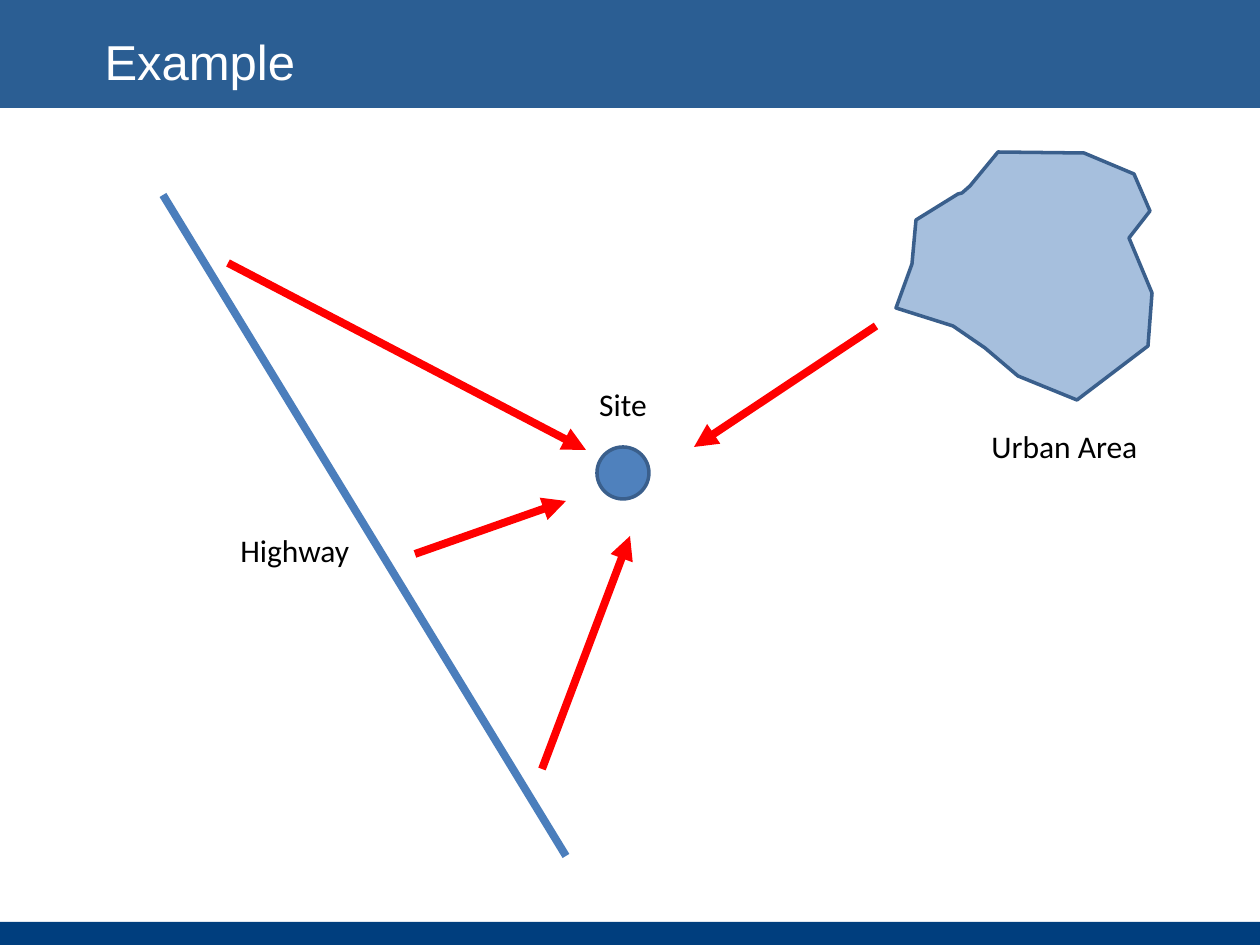
from lxml.etree import SubElement
from pptx import Presentation
from pptx.dml.color import RGBColor
from pptx.enum.shapes import MSO_CONNECTOR, MSO_SHAPE
from pptx.enum.text import MSO_ANCHOR, MSO_AUTO_SIZE, PP_ALIGN
from pptx.oxml.ns import qn
from pptx.util import Pt

PX = 914400 / 126  # EMU per px
WIDTH, HEIGHT = 1260, 945

NAVY = RGBColor(0x00, 0x3E, 0x7E)
BLUE = RGBColor(0x4F, 0x81, 0xBD)
OUTLINE = RGBColor(0x3A, 0x5F, 0x8C)
ROAD = RGBColor(0x4B, 0x7E, 0xBC)
RED = RGBColor(0xFF, 0x00, 0x00)
BLACK = RGBColor(0x00, 0x00, 0x00)
WHITE = RGBColor(0xFF, 0xFF, 0xFF)

CITY_OUTLINE = [
    (74, 34), (66, 41), (62, 42), (20, 68), (16, 112), (0, 156), (57, 174),
    (89, 196), (122, 224), (181, 248), (252, 194), (256, 141), (233, 86),
    (254, 59), (238, 22), (188, 1), (102, 0),
]


def emu(*lengths):
    return [round(n * PX) for n in lengths]


def set_attrs(obj, values):
    for name, value in values.items():
        setattr(obj, name, value)


def paint(sp, fill, line=None, alpha=100):
    sp.shadow.inherit = False
    sp.fill.solid()
    sp.fill.fore_color.rgb = fill
    if alpha < 100:
        color = sp.fill._xPr.find(qn("a:solidFill"))[0]
        SubElement(color, qn("a:alpha"), val=str(alpha * 1000))
    if line is None:
        sp.line.fill.background()
    else:
        sp.line.color.rgb = line
        sp.line.width = Pt(2)


def write(tf, text, size, font, color, align=PP_ALIGN.LEFT):
    p = tf.paragraphs[0]
    p.alignment = align
    r = p.add_run()
    r.text = text
    set_attrs(r.font, {"size": Pt(size), "name": font, "bold": False})
    r.font.color.rgb = color


def add_label(s, text, x, y, w, wrap=False, align=PP_ALIGN.LEFT):
    tf = s.shapes.add_textbox(*emu(x, y, w, 50)).text_frame
    set_attrs(tf, {"word_wrap": wrap, "auto_size": MSO_AUTO_SIZE.SHAPE_TO_FIT_TEXT})
    write(tf, text, 18, "Calibri", BLACK, align)


def add_line(shapes, x1, y1, x2, y2, color, arrow=False):
    line = shapes.add_connector(MSO_CONNECTOR.STRAIGHT, *emu(x1, y1, x2, y2))
    line.line.color.rgb = color
    line.line.width = Pt(4.5)
    if arrow:
        SubElement(line.line._get_or_add_ln(), qn("a:tailEnd"), type="triangle")
    SubElement(line.element.spPr, qn("a:effectLst"))


def add_frame(s, x, y, w, h):
    """Footer band, header band and title."""
    for top, height, alpha in ((y + h - 23, 23, 100), (y, 108, 83)):
        band = s.shapes.add_shape(MSO_SHAPE.RECTANGLE, *emu(x, top, w, height))
        paint(band, NAVY, alpha=alpha)
    title = s.shapes.title
    left, top, width, height = emu(x + 92, y + 24, 851, 73)
    set_attrs(title, {"left": left, "top": top, "width": width, "height": height})
    set_attrs(title.text_frame, {"vertical_anchor": MSO_ANCHOR.MIDDLE,
                                 "auto_size": MSO_AUTO_SIZE.NONE})
    write(title.text_frame, "Example", 28, "Arial", WHITE)
    title.element.getparent().append(title.element)  # in front of the bands


def add_site(s, x, y, size):
    site = s.shapes.add_shape(MSO_SHAPE.OVAL, *emu(x, y, size, size))
    paint(site, BLUE, OUTLINE)
    add_label(s, "Site", x + size / 2 - 47, y - 68, 94, True, PP_ALIGN.CENTER)


def add_urban_area(s, x, y):
    builder = s.shapes.build_freeform(*CITY_OUTLINE[0], scale=PX)
    builder.add_line_segments(CITY_OUTLINE[1:], close=True)
    paint(builder.convert_to_shape(*emu(x, y)), BLUE, OUTLINE, alpha=50)
    add_label(s, "Urban Area", x + 83, y + 269, 173)


def add_highway(s, x, y, w, h):
    add_line(s.shapes, x, y, x + w, y + h, ROAD)
    add_label(s, "Highway", x + 65, y + 330, 136)


def add_impacts(s, x, y):
    """Red arrows pointing at the site, relative to its centre."""
    group = s.shapes.add_group_shape()
    for x1, y1, x2, y2 in (
        (-395, -210, -37, -23),
        (-208, 81, -57, 28),
        (-81, 296, 7, 63),
        (253, -147, 71, -26),
    ):
        add_line(group.shapes, x + x1, y + y1, x + x2, y + y2, RED, arrow=True)


def main():
    prs = Presentation()
    prs.slide_width, prs.slide_height = emu(WIDTH, HEIGHT)
    s = prs.slides.add_slide(prs.slide_layouts[5])
    add_frame(s, 0, 0, WIDTH, HEIGHT)
    add_site(s, 597, 447, 52)
    add_urban_area(s, 896, 152)
    add_highway(s, 163, 195, 403, 661)
    add_impacts(s, 623, 473)
    prs.save("out.pptx")


if __name__ == "__main__":
    main()
